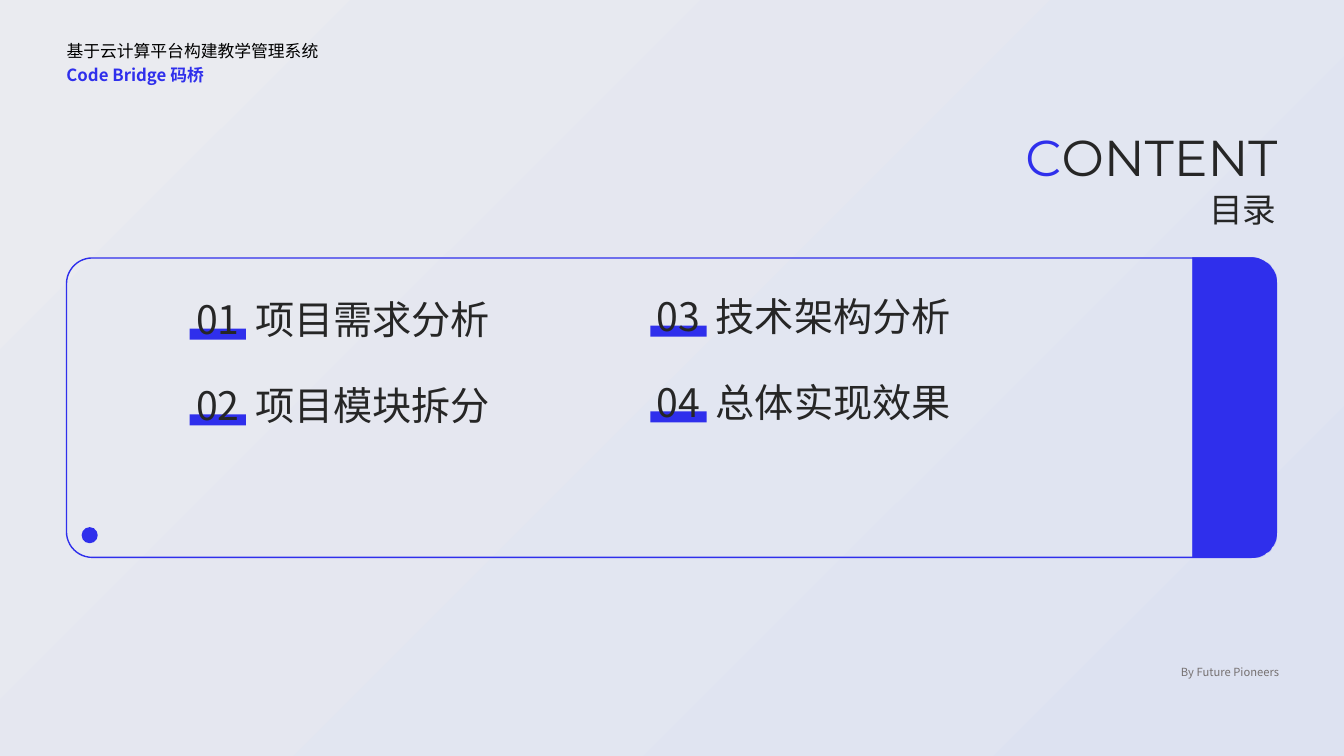
from lxml import etree
from pptx import Presentation
from pptx import util as u
from pptx.dml.color import RGBColor
from pptx.enum import shapes, text
from pptx.oxml import ns, parse_xml

COLORS = {"blue": "2F2FEC", "ink": "262626", "black": "000000", "grey": "767171",
          "mist": "EAEBF0", "sky": "DDE2F1", "white": "FFFFFF"}
CJK = "Noto Sans CJK SC"
WIDTH, HEIGHT = 13.33, 7.5
MARGIN = 0.66

TITLE = [("C", "blue"), ("ONTENT", "ink")]
LABELS = [
    ([("基于云计算平台构建教学管理系统", "black")], (MARGIN, 0.4, 2.52, 0.2), 12, "Roboto", False, "LEFT"),
    ([("Code Bridge 码桥", "blue")], (MARGIN, 0.64, 1.43, 0.2), 12, CJK, True, "LEFT"),
    ([("目录", "ink")], (11.99, 1.87, 0.67, 0.4), 24, CJK, False, "RIGHT"),
    ([("By Future Pioneers", "grey")], (11.69, 6.57, 1, 0.15), 8, CJK, False, "RIGHT"),
]
CHAPTERS = [["项目需求分析", "项目模块拆分"], ["技术架构分析", "总体实现效果"]]
COLUMNS = [(1.88, 2.93), (6.45, 2.9)]
ROW_STEP = 0.85

PANEL = (MARGIN, 2.56, 12, 2.97)
PANEL_FILL = f"""<a:gradFill {ns.nsdecls('a')} rotWithShape="1"><a:gsLst>
<a:gs pos="93000"><a:srgbClr val="{COLORS['white']}"><a:alpha val="0"/></a:srgbClr></a:gs>
<a:gs pos="93000"><a:srgbClr val="{COLORS['blue']}"/></a:gs>
</a:gsLst><a:lin ang="0" scaled="0"/></a:gradFill>"""


def color(name):
    return RGBColor.from_string(COLORS[name])


def inches(area):
    return [u.Inches(value) for value in area]


def write(box, spans, size, font, bold=False, align="LEFT"):
    frame = box.text_frame
    frame.margin_left = frame.margin_right = frame.margin_top = frame.margin_bottom = 0
    frame.word_wrap = False
    frame.auto_size = text.MSO_AUTO_SIZE.SHAPE_TO_FIT_TEXT
    frame.vertical_anchor = text.MSO_ANCHOR.TOP
    para = frame.paragraphs[0]
    para.alignment = getattr(text.PP_ALIGN, align)
    para.line_spacing = 1.2 if size == 8 else 1
    para.space_before = u.Pt(0)
    para.font.size, para.font.name, para.font.bold = u.Pt(size), font, bold
    defaults = para.font._element
    etree.SubElement(defaults, ns.qn("a:ea")).set("typeface", CJK)
    for words, name in spans:
        span = para.add_run()
        span.text = words
        span.font.color.rgb = color(name)


def add_label(parent, spans, area, size, font, bold=False, align="LEFT"):
    write(parent.add_textbox(*inches(area)), spans, size, font, bold, align)


def add_block(parent, kind, area):
    block = parent.add_shape(kind, *inches(area))
    block.shadow.inherit = False
    block.fill.solid()
    block.fill.fore_color.rgb = color("blue")
    block.line.fill.background()
    return block


def add_panel(parent):
    panel = add_block(parent, shapes.MSO_SHAPE.ROUNDED_RECTANGLE, PANEL)
    panel.adjustments[0] = 0.086
    panel.line.color.rgb = color("blue")
    panel.line.width = u.Pt(1)
    solid = panel._element.spPr.find(ns.qn("a:solidFill"))
    solid.getparent().replace(solid, parse_xml(PANEL_FILL))


def add_chapter(parent, number, name, left, top):
    group = parent.add_group_shape().shapes
    add_label(group, [(name, "ink")], (left + 0.65, top, 2.36, 0.47), 28, CJK)
    add_block(group, shapes.MSO_SHAPE.RECTANGLE, (left, top + 0.33, 0.56, 0.11))
    add_label(group, [(f"{number:02}", "ink")], (left + 0.05, top, 0.46, 0.47), 28, CJK, align="CENTER")


def main():
    deck = Presentation()
    deck.slide_width, deck.slide_height = inches((WIDTH, HEIGHT))
    page = deck.slides.add_slide(deck.slide_layouts[5])

    backdrop = page.background.fill
    backdrop.gradient()
    backdrop.gradient_angle = 315
    for stop, name in zip(backdrop.gradient_stops, ("mist", "sky")):
        stop.color.rgb = color(name)

    title = page.shapes.title
    title.left, title.top, title.width, title.height = inches((10.01, 1.25, 2.66, 0.61))
    write(title, TITLE, 36, "Montserrat", align="RIGHT")

    add_panel(page.shapes)
    for label in LABELS:
        add_label(page.shapes, *label)
    add_block(page.shapes, shapes.MSO_SHAPE.OVAL, (0.81, 5.23, 0.16, 0.16))

    number = 0
    for (left, top), names in zip(COLUMNS, CHAPTERS):
        for row, name in enumerate(names):
            number += 1
            add_chapter(page.shapes, number, name, left, top + row * ROW_STEP)

    deck.save("out.pptx")


if __name__ == "__main__":
    main()
